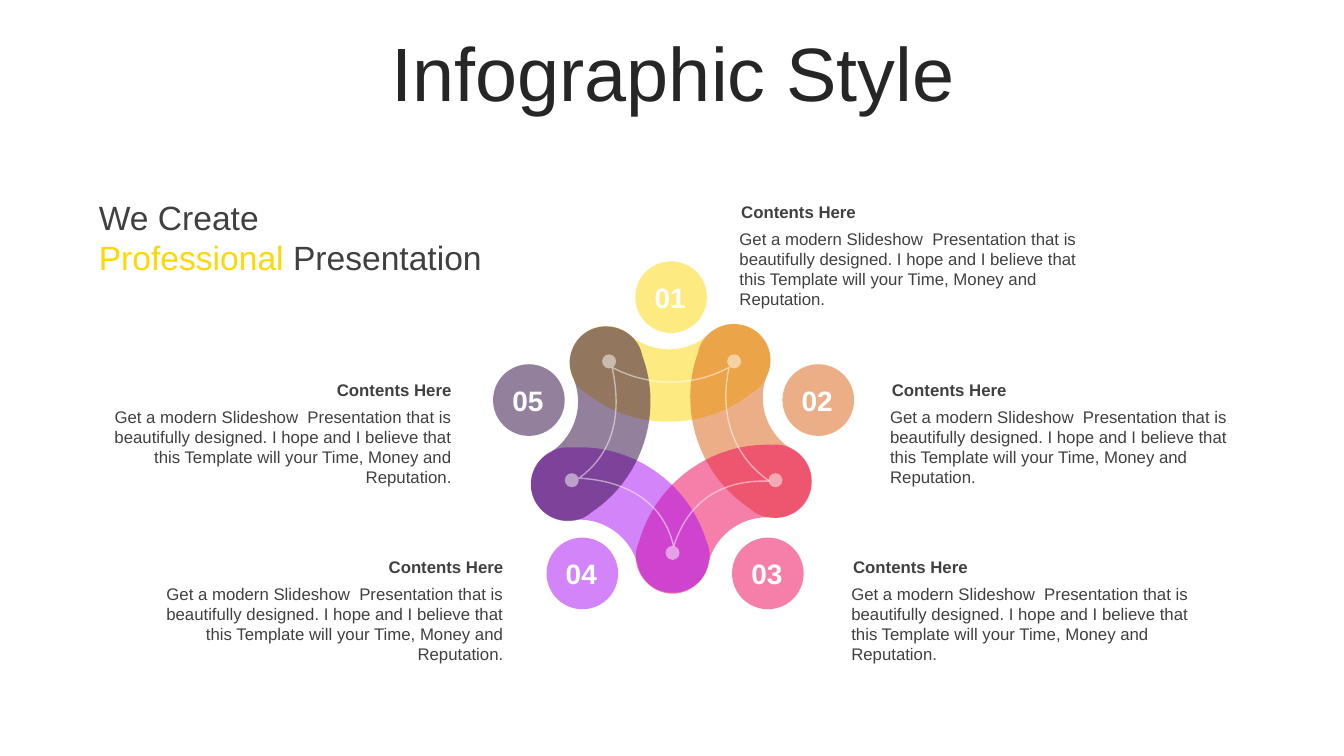
from lxml.etree import SubElement
from pptx import Presentation
from pptx.dml.color import RGBColor
from pptx.enum.shapes import MSO_SHAPE
from pptx.enum.text import MSO_ANCHOR, MSO_AUTO_SIZE, PP_ALIGN
from pptx.oxml.ns import qn
from pptx.util import Pt

FONT = "Arial"
INK = RGBColor(0x26, 0x26, 0x26)
GREY = RGBColor(0x40, 0x40, 0x40)
WHITE = RGBColor(0xFF, 0xFF, 0xFF)
YELLOW = RGBColor(0xFC, 0xD8, 0x07)
ORANGE = RGBColor(0xDB, 0x5E, 0x0E)
PINK = RGBColor(0xEE, 0x00, 0x57)
VIOLET = RGBColor(0xA7, 0x0B, 0xF2)
PLUM = RGBColor(0x29, 0x02, 0x3C)

HEADING = "Contents Here"
BODY = ("Get a modern Slideshow  Presentation that is beautifully designed. "
        "I hope and I believe that this Template will your Time, Money and Reputation.")

# Left, top and alignment of each contents block
CONTENTS = [
    (522.4, 140.4, PP_ALIGN.LEFT),
    (630, 267.4, PP_ALIGN.LEFT),
    (602.3, 394.2, PP_ALIGN.LEFT),
    (104.7, 394.2, PP_ALIGN.RIGHT),
    (67.7, 267.4, PP_ALIGN.RIGHT),
]

# Colour, petal centre, petal rotation, circle centre and dot centre, from the hub
STEPS = [
    (YELLOW, (-1.6, -56), 0, (-0.8, -110), (-45.1, -64.2)),
    (ORANGE, (51, -19.2), 72.2, (104.3, -36.5), (44.2, -64.2)),
    (PINK, (32.3, 42), 144.6, (68.3, 87.3), (73.7, 20.7)),
    (VIOLET, (-32.5, 42.7), 215.3, (-64.2, 87.3), (0.2, 72.6)),
    (PLUM, (-53.4, -17.1), 288.6, (-102.4, -36.5), (-71.8, 20.7)),
]

# Outlines: a start point, then two control points and an end point per curve
PETAL_SIZE = (143.3, 69.8)
PETAL = [
    (117.4, 0),
    (131.8, 0), (143.3, 11.5), (143.3, 26.6),
    (143.3, 36), (138.2, 44.6), (130.3, 49),
    (96.5, 76.3), (47.5, 77), (13, 50.4),
    (5, 46.1), (0, 37.4), (0, 28.1),
    (0, 13.7), (11.5, 1.4), (25.9, 1.4),
    (33.1, 1.4), (39.6, 4.3), (44.6, 9.4),
    (61.9, 22.3), (85.7, 20.9), (101.2, 5.8),
    (105.8, 2.2), (110.9, 0), (117.4, 0),
]
THREAD_CORNER = (-66.7, -59.9)
THREAD_SIZE = (136.1, 128.1)
THREAD = [
    (23.7, 0),
    (49.7, 13.7), (80.6, 14.4), (107.3, 0),
    (100.8, 29.5), (107.3, 61.2), (136.1, 81.3),
    (102.2, 79.9), (77.7, 95.7), (67.7, 128.1),
    (60.5, 95), (31.7, 80.6), (0, 79.2),
    (25.2, 61.2), (30.9, 32.4), (23.7, 0),
]


def add_outline(page, outline, corner, size):
    """Closed outline of cubic curves, its points relative to the corner."""
    points = [(Pt(x), Pt(y)) for x, y in outline]
    builder = page.shapes.build_freeform(*points[0], scale=1.0)
    builder.add_line_segments(points[3::3], close=True)
    shape = builder.convert_to_shape()
    shape.left, shape.top = map(Pt, corner)
    shape.width, shape.height = map(Pt, size)
    shape.shadow.inherit = False

    # Turn each straight segment into a curve
    geometry = next(shape.element.spPr.iter(qn("a:path")))
    geometry.set("w", str(shape.width))
    geometry.set("h", str(shape.height))
    start = geometry.find(qn("a:moveTo")).find(qn("a:pt"))
    start.set("x", str(points[0][0]))
    start.set("y", str(points[0][1]))
    for index, segment in enumerate(geometry.findall(qn("a:lnTo"))):
        curve = SubElement(geometry, qn("a:cubicBezTo"))
        for x, y in points[3 * index + 1:3 * index + 4]:
            SubElement(curve, qn("a:pt"), x=str(x), y=str(y))
        geometry.replace(segment, curve)
    return shape


def make_half_transparent(shape):
    for colour in shape.element.spPr.iter(qn("a:srgbClr")):
        SubElement(colour, qn("a:alpha"), val="50000")


def paint(shape, colour):
    shape.shadow.inherit = False
    shape.fill.solid()
    shape.fill.fore_color.rgb = colour
    shape.line.fill.background()
    make_half_transparent(shape)


def add_round(page, kind, centre, size, colour):
    x, y = centre
    shape = page.shapes.add_shape(kind, Pt(x - size / 2), Pt(y - size / 2), Pt(size), Pt(size))
    paint(shape, colour)
    return shape


def set_insets(frame, left, top, right, bottom):
    frame.margin_left, frame.margin_top = Pt(left), Pt(top)
    frame.margin_right, frame.margin_bottom = Pt(right), Pt(bottom)


def style(para, size, colour, bold=False, align=PP_ALIGN.LEFT):
    para.alignment = align
    para.font.name = FONT
    para.font.size = Pt(size)
    para.font.bold = bold
    para.font.color.rgb = colour


def add_text_box(page, box, insets):
    frame = page.shapes.add_textbox(*map(Pt, box)).text_frame
    frame.word_wrap = True
    set_insets(frame, *insets)
    return frame


def add_title(page, box):
    title = page.shapes.title
    title.left, title.top, title.width, title.height = map(Pt, box)
    frame = title.text_frame
    frame.text = "Infographic Style"
    frame.word_wrap = True
    frame.auto_size = MSO_AUTO_SIZE.NONE
    frame.vertical_anchor = MSO_ANCHOR.MIDDLE
    para = frame.paragraphs[0]
    style(para, 54, INK, align=PP_ALIGN.CENTER)
    para.line_spacing = 0.9
    para.space_before = Pt(10)


def add_tagline(page, box):
    frame = add_text_box(page, box, (5.8, 0, 2.9, 0))
    frame.text = "We Create"
    style(frame.paragraphs[0], 24, GREY)
    para = frame.add_paragraph()
    style(para, 24, GREY)
    accent = para.add_run()
    accent.text = "Professional "
    accent.font.color.rgb = YELLOW
    para.add_run().text = "Presentation"


def add_contents(page, box, align):
    left, top, width, height = box
    heading_drop = 19.2
    heading = add_text_box(page, (left, top, width, 21.6), (7.2, 3.6, 8.6, 3.6))
    heading.text = HEADING
    style(heading.paragraphs[0], 12, GREY, True, align)
    body_box = (left, top + heading_drop, width, height - heading_drop)
    body = add_text_box(page, body_box, (5.8, 3.6, 8.6, 3.6))
    body.text = BODY
    style(body.paragraphs[0], 12, GREY, align=align)


def add_wheel(page, hub):
    def from_hub(offset):
        return hub[0] + offset[0], hub[1] + offset[1]

    # Overlapping petals
    for colour, petal_centre, angle, _, _ in STEPS:
        x, y = from_hub(petal_centre)
        corner = (x - PETAL_SIZE[0] / 2, y - PETAL_SIZE[1] / 2)
        petal = add_outline(page, PETAL, corner, PETAL_SIZE)
        petal.rotation = angle
        paint(petal, colour)

    # Numbered circles
    for number, (colour, _, _, circle_centre, _) in enumerate(STEPS, 1):
        circle = add_round(page, MSO_SHAPE.OVAL, from_hub(circle_centre), 51.2, colour)
        frame = circle.text_frame
        set_insets(frame, 0, 0, 1.4, 0)
        frame.vertical_anchor = MSO_ANCHOR.MIDDLE
        frame.text = f"{number:02}"
        style(frame.paragraphs[0], 20, WHITE, True, PP_ALIGN.CENTER)

    # Joints and the thread between them
    for *_, dot_centre in STEPS:
        add_round(page, MSO_SHAPE.FLOWCHART_CONNECTOR, from_hub(dot_centre), 10, WHITE)
    thread = add_outline(page, THREAD, from_hub(THREAD_CORNER), THREAD_SIZE)
    thread.fill.background()
    thread.line.color.rgb = WHITE
    thread.line.width = Pt(1)
    make_half_transparent(thread)


def main():
    deck = Presentation()
    deck.slide_width, deck.slide_height = Pt(960), Pt(540)
    page = deck.slides.add_slide(deck.slide_layouts.get_by_name("Title Only"))
    add_title(page, (25.2, 26.6, 911.5, 56.9))
    for left, top, align in CONTENTS:
        add_contents(page, (left, top, 263.5, 84.7), align)
    add_tagline(page, (64.8, 140.4, 299.5, 58.3))
    add_wheel(page, (480.2, 322.3))
    deck.save("out.pptx")


if __name__ == "__main__":
    main()
